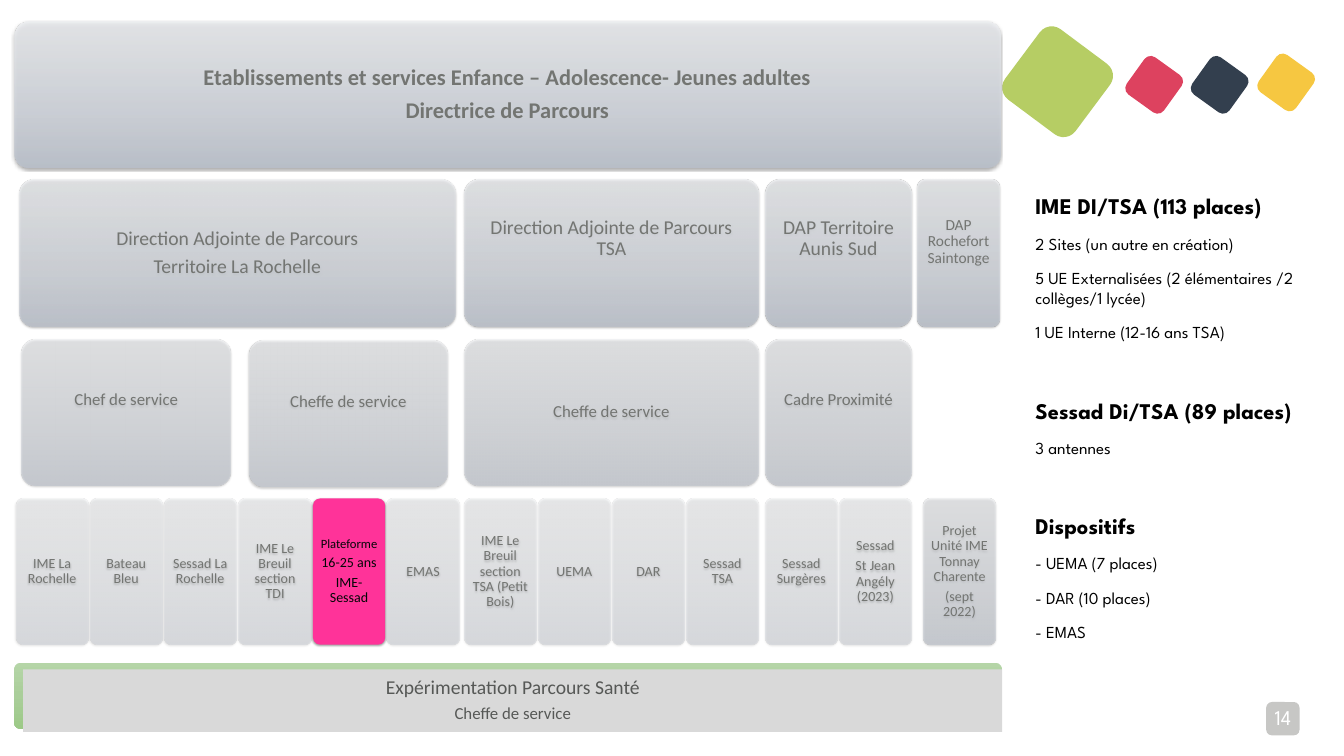
from lxml import etree
from pptx import Presentation
from pptx.dml.color import RGBColor
from pptx.enum import shapes, text
from pptx.oxml import ns
from pptx.util import Cm, Pt

GREY = [(0, "BAC1CD"), (35, "CFD4DC"), (100, "EDEFF2")]
GREEN = [(0, "B5D5A7"), (50, "AACE9A"), (100, "9CC987")]
TALL = 7.37
TOPS = [1.09, 9.07, 17.09, 25.12]
HEAD = ["Etablissements et services Enfance – Adolescence- Jeunes adultes",
        "Directrice de Parcours"]

# left, top, width, opacity, size, lines, raised (text sits above the middle)
BOXES = [
    (0.97, TOPS[1], 21.97, 70, 28,
     ["Direction Adjointe de Parcours", "Territoire La Rochelle"], False),
    (23.39, TOPS[1], 14.83, 70, 28, ["Direction Adjointe de Parcours TSA"], True),
    (38.56, TOPS[1], 7.37, 70, 28, ["DAP Territoire Aunis Sud"], True),
    (46.23, TOPS[1], 4.14, 70, 22, ["DAP Rochefort Saintonge"], True),
    (1.09, TOPS[2], 10.54, 50, 24, ["Chef de service"], True),
    (12.55, TOPS[2] + 0.08, 10, 50, 24, ["Cheffe de service"], True),
    (23.39, TOPS[2], 14.83, 50, 24, ["Cheffe de service"], False),
    (38.56, TOPS[2], 7.37, 50, 24, ["Cadre Proximité"], True),
]

# left, opacity, units
UNITS = [
    (0.81, 30, [["IME La Rochelle"], ["Bateau Bleu"], ["Sessad La Rochelle"]]),
    (12.04, 30, [["IME Le Breuil section TDI"],
                 [("Plateforme", 18), "16-25 ans", "IME-Sessad"], ["EMAS"]]),
    (23.39, 30, [["IME Le Breuil section TSA (Petit Bois)"], ["UEMA"], ["DAR"],
                 ["Sessad TSA"]]),
    (38.56, 30, [["Sessad Surgères"], ["Sessad", "St Jean Angély (2023)"]]),
    (46.53, 50, [["Projet Unité IME Tonnay Charente", "(sept 2022)"]]),
]
UNIT, STEP = 3.64, 3.73

SIDE = [
    ("IME DI/TSA (113 places)",
     ["2 Sites (un autre en création)",
      "5 UE Externalisées (2 élémentaires /2 collèges/1 lycée)",
      "1 UE Interne (12-16 ans TSA)"]),
    ("Sessad Di/TSA (89 places)", ["3 antennes"]),
    ("Dispositifs", ["- UEMA (7 places)", "- DAR (10 places)", "- EMAS"]),
]

# left, top, side, turn, colour
TILES = [
    (63.65, 3, 2.31, 35.7, "F6C741"),
    (60.3, 3.12, 2.31, 35.7, "333F4E"),
    (57, 3.12, 2.31, 35.7, "DD425F"),
    (51.08, 1.91, 4.42, 36.7, "B6CD64"),
]


def paint(fill, tint):
    fill.solid()
    fill.fore_color.rgb = RGBColor.from_string(tint)


def node(up, tag, **attrs):
    kid = etree.SubElement(up, ns.qn("a:" + tag))
    for key, val in attrs.items():
        kid.set(key, str(val))
    return kid


def blend(shape, stops, turn, alpha):
    """Fill with a gradient whose stops share one opacity, in percent."""
    grad = node(shape._element.spPr, "gradFill", rotWithShape=1)
    row = node(grad, "gsLst")
    for pos, tint in stops:
        stop = node(row, "gs", pos=pos * 1000)
        node(node(stop, "srgbClr", val=tint), "alpha", val=alpha * 1000)
    node(grad, "lin", ang=turn * 60000, scaled=0)


def shade(shape):
    """Add the soft shadow below a box."""
    shape.shadow.inherit = False
    fx = shape._element.spPr.find(ns.qn("a:effectLst"))
    drop = node(fx, "outerShdw", blurRad=Pt(3.1), dist=Pt(1.6),
                dir=5400000, rotWithShape=0)
    node(node(drop, "srgbClr", val="000000"), "alpha", val=38000)


def block(slide, left, top, wide, high, tint=None, stops=GREY, turn=270,
          alpha=100, round=0.1, deep=False):
    kind = shapes.MSO_SHAPE.ROUNDED_RECTANGLE if round else shapes.MSO_SHAPE.RECTANGLE
    shape = slide.shapes.add_shape(kind, Cm(left), Cm(top), Cm(wide), Cm(high))
    if round:
        shape.adjustments[0] = round
    if tint:
        paint(shape.fill, tint)
    else:
        blend(shape, stops, turn, alpha)
    shape.line.fill.background()
    if deep:
        shade(shape)
    else:
        shape.shadow.inherit = False
    return shape


def write(shape, lines, size=20, tint="737572", face="Calibri", bold=False,
          align=text.PP_ALIGN.CENTER, raised=False):
    """Fill a box with centred lines; a line may be (words, size)."""
    frame = shape.text_frame
    frame.word_wrap = True
    frame.auto_size = text.MSO_AUTO_SIZE.NONE
    frame.vertical_anchor = text.MSO_ANCHOR.MIDDLE
    pad = Cm(size * 0.01)
    frame.margin_left = frame.margin_right = frame.margin_top = pad
    frame.margin_bottom = pad + (Pt(size * 1.45) if raised else 0)
    for i, line in enumerate(lines):
        words, pts = line if isinstance(line, tuple) else (line, size)
        para = frame.paragraphs[0] if i == 0 else frame.add_paragraph()
        para.alignment = align
        para.line_spacing = 0.9
        para.space_before = Pt(0)
        para.space_after = Pt(pts * 0.35 if i < len(lines) - 1 else 0)
        add(para, words, pts, tint, face, bold)


def add(para, words, size, tint, face, bold):
    run = para.add_run()
    run.text = words
    font = run.font
    font.name, font.size, font.bold = face, Pt(size), bold
    paint(font.fill, tint)


def place(shape, left, top, wide, high):
    shape.left, shape.top, shape.width, shape.height = map(Cm, (left, top, wide, high))


def list_side(body):
    place(body, 51.92, 8.56, 14.71, 25.15)
    frame = body.text_frame
    frame.word_wrap = True
    frame.auto_size = text.MSO_AUTO_SIZE.NONE
    frame.vertical_anchor = text.MSO_ANCHOR.TOP
    frame.margin_top = Cm(1.14)
    first = True
    for name, items in SIDE:
        for i, words in enumerate([name] + items):
            para = frame.paragraphs[0] if first else frame.add_paragraph()
            props = para._p.get_or_add_pPr()
            props.set("marL", "0")
            props.set("indent", "0")
            node(props, "buNone")
            para.space_before = Pt(0 if first else 20 if i else 78)
            add(para, words, 24 if i else 32, "000000", "League Spartan", i == 0)
            first = False


def main():
    deck = Presentation()
    deck.slide_width, deck.slide_height = Cm(67.72), Cm(38.1)
    slide = deck.slides.add_slide(deck.slide_layouts[1])
    title, body = slide.placeholders
    list_side(body)

    page = block(slide, 63.8, 35.38, 1.68, 1.68, tint="C7C7C5", round=0.17)
    write(page, ["14"], size=30, tint="FFFFFF", face="League Spartan")
    page.text_frame.margin_left = page.text_frame.margin_right = 0

    for left, top, side, turn, tint in TILES:
        block(slide, left, top, side, side, tint=tint, round=0.17).rotation = turn

    spot = (0.71, TOPS[0], 49.71, TALL)
    block(slide, *spot, alpha=80, deep=True)
    place(title, *spot)
    write(title, HEAD, size=32, bold=True)
    slide.shapes._spTree.append(title._element)  # above its box

    for left, top, wide, alpha, size, lines, raised in BOXES:
        box = block(slide, left, top, wide, TALL, alpha=alpha, deep=True)
        write(box, lines, size=size, raised=raised)

    for left, alpha, units in UNITS:
        for i, lines in enumerate(units):
            hot = "IME-Sessad" in lines
            box = block(slide, left + i * STEP, TOPS[3], UNIT, TALL, alpha=alpha,
                        tint="FF3399" if hot else None, deep=True)
            write(box, lines, tint="050607" if hot else "737572")

    block(slide, 0.71, 33.4, 49.78, 3.33, stops=GREEN, turn=90)
    bar = block(slide, 1.17, 33.73, 49.33, 3.15, tint="D9D9D9", round=0)
    write(bar, ["Expérimentation Parcours Santé", ("Cheffe de service", 24)],
          size=28, tint="565856")
    deck.save("out.pptx")


if __name__ == "__main__":
    main()
